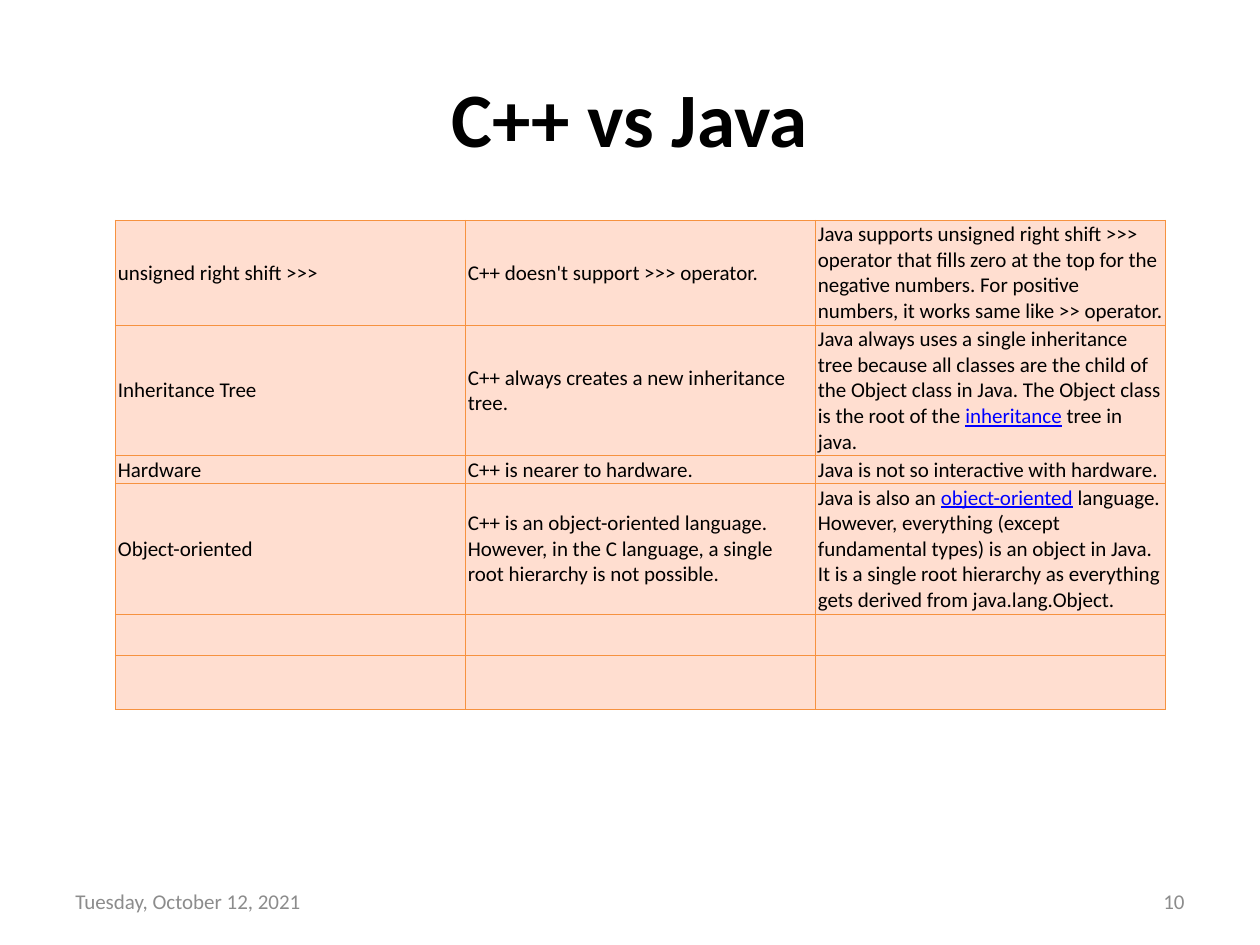
from pptx import Presentation as Deck
from pptx.dml.color import RGBColor as Color
from pptx.enum.text import MSO_ANCHOR as Anchor, PP_ALIGN as Align
from pptx.oxml import parse_xml as to_xml
from pptx.oxml.ns import nsdecls
from pptx.util import Pt

INK, LINK, GREY = "000000", "0000FF", "8C8C8C"
FILL, EDGE = "FFDED0", "F69240"
COLS = [200, 200, 200]
HIGHS = [60, 74.3, 16, 74.3, 23.5, 31]
INSET = {"margin_left": Pt(1.4), "margin_right": Pt(1.4),
         "margin_top": Pt(0.7), "margin_bottom": Pt(0.7),
         "vertical_anchor": Anchor.MIDDLE}
ROWS = [
    [["unsigned right shift >>>"],
     ["C++ doesn't support >>> operator."],
     ["Java supports unsigned right shift >>> operator that fills zero at the "
      "top for the negative numbers. For positive numbers, it works same like "
      ">> operator."]],
    [["Inheritance Tree"],
     ["C++ always creates a new inheritance tree."],
     ["Java always uses a single inheritance tree because all classes are the "
      "child of the Object class in Java. The Object class is the root of the ",
      "inheritance", " tree in java."]],
    [["Hardware"],
     ["C++ is nearer to hardware."],
     ["Java is not so interactive with hardware."]],
    [["Object-oriented"],
     ["C++ is an object-oriented language. However, in the C language, a "
      "single root hierarchy is not possible."],
     ["Java is also an ", "object-oriented",
      " language. However, everything (except fundamental types) is an object "
      "in Java. It is a single root hierarchy as everything gets derived from "
      "java.lang.Object."]],
    [[], [], []],
    [[], [], []],
]


def tint(code):
    return Color.from_string(code)


def style(item, form):
    for name, value in form.items():
        setattr(item, name, value)


def write(para, text, size, hue, **form):
    run = para.add_run()
    run.text = text
    style(run.font, {"name": "Calibri", "size": Pt(size), **form})
    run.font.color.rgb = tint(hue)


def place(shape, left, top, wide, high):
    style(shape, {"left": Pt(left), "top": Pt(top),
                  "width": Pt(wide), "height": Pt(high)})


def add_title(slide, text):
    title = slide.shapes.title
    place(title, 36, 21.6, 648, 90)
    title.text_frame.vertical_anchor = Anchor.MIDDLE
    para = title.text_frame.paragraphs[0]
    para.alignment = Align.CENTER
    write(para, text, 44, INK, bold=True)


def add_note(slide, text, left, align):
    box = slide.shapes.add_textbox(Pt(left), Pt(500.5), Pt(168), Pt(28.8))
    style(box.text_frame, {"word_wrap": True, "vertical_anchor": Anchor.MIDDLE})
    para = box.text_frame.paragraphs[0]
    para.alignment = align
    write(para, text, 12, GREY)


def frame(cell):
    props = cell._tc.get_or_add_tcPr()
    for spot, side in enumerate(("lnL", "lnR", "lnT", "lnB")):
        line = to_xml(
            f'<a:{side} {nsdecls("a")} w="{Pt(0.75)}"><a:solidFill>'
            f'<a:srgbClr val="{EDGE}"/></a:solidFill></a:{side}>')
        props.insert(spot, line)


def fill_cell(cell, parts):
    style(cell, INSET)
    cell.fill.solid()
    cell.fill.fore_color.rgb = tint(FILL)
    frame(cell)
    para = cell.text_frame.paragraphs[0]
    for spot, part in enumerate(parts):
        linked = spot == 1
        write(para, part, 12, LINK if linked else INK, underline=linked)


def add_grid(slide):
    grid = slide.shapes.add_table(len(ROWS), len(COLS), Pt(66), Pt(126),
                                  Pt(sum(COLS)), Pt(sum(HIGHS))).table
    style(grid, {"first_row": False, "horz_banding": False})
    for col, wide in zip(grid.columns, COLS):
        col.width = Pt(wide)
    for row, high, texts in zip(grid.rows, HIGHS, ROWS):
        row.height = Pt(high)
        for cell, parts in zip(row.cells, texts):
            fill_cell(cell, parts)


def main():
    deck = Deck()
    style(deck, {"slide_width": Pt(720), "slide_height": Pt(540)})
    slide = deck.slides.add_slide(deck.slide_layouts[5])
    add_title(slide, "C++ vs Java")
    add_grid(slide)
    add_note(slide, "Tuesday, October 12, 2021", 36, Align.LEFT)
    add_note(slide, "10", 516, Align.RIGHT)
    deck.save("out.pptx")


if __name__ == "__main__":
    main()
